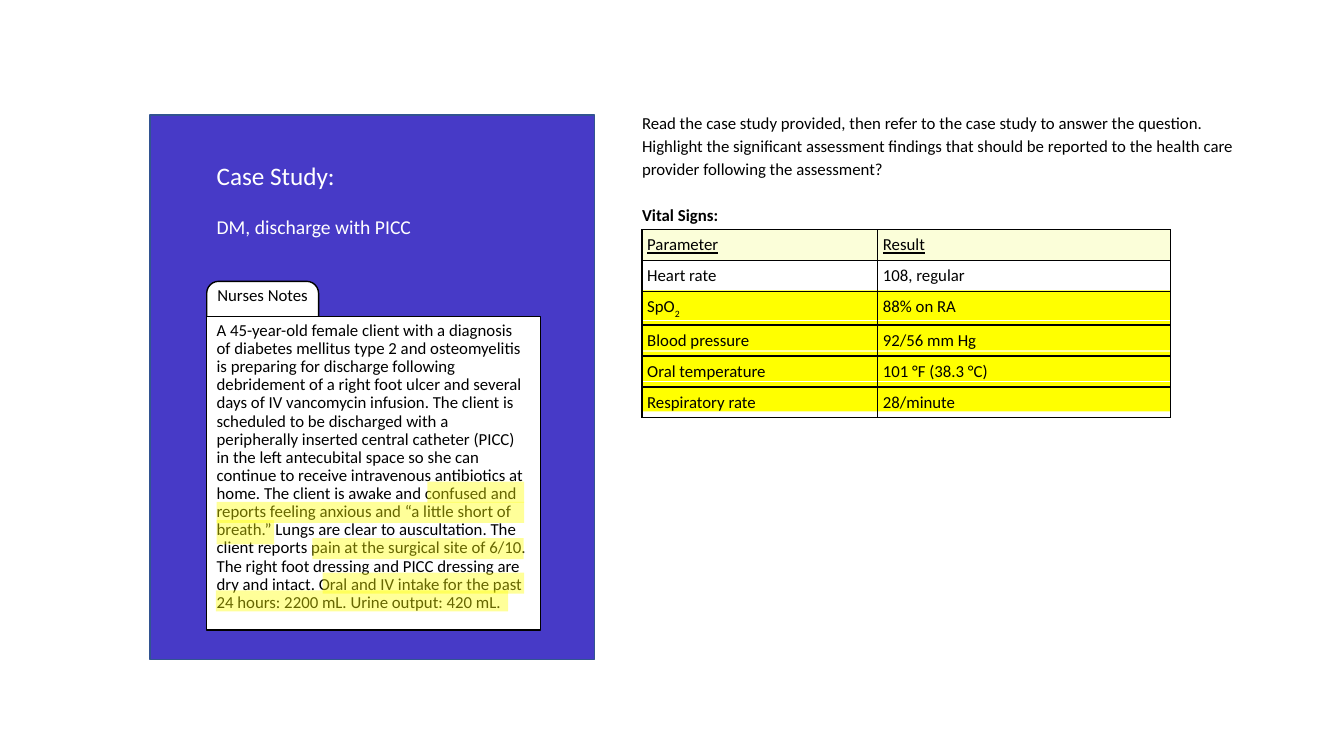
from pptx import Presentation
from pptx.dml.color import RGBColor
from pptx.enum.shapes import MSO_SHAPE
from pptx.enum.text import MSO_ANCHOR, PP_ALIGN
from pptx.oxml import parse_xml
from pptx.oxml.ns import nsdecls, qn
from pptx.util import Cm, Pt
from lxml.etree import SubElement

# Content
TITLE = "Case Study:"
SUBTITLE = "DM, discharge with PICC"
TAB = "Nurses Notes"
NOTES = (
    "A 45-year-old female client with a diagnosis of diabetes mellitus type 2 and "
    "osteomyelitis is preparing for discharge following debridement of a right foot "
    "ulcer and several days of IV vancomycin infusion. The client is scheduled to be "
    "discharged with a peripherally inserted central catheter (PICC) in the left "
    "antecubital space so she can continue to receive intravenous antibiotics at home. "
    "The client is awake and confused and reports feeling anxious and “a little short "
    "of breath.” Lungs are clear to auscultation. The client reports pain at the "
    "surgical site of 6/10. The right foot dressing and PICC dressing are dry and "
    "intact. Oral and IV intake for the past 24 hours: 2200 mL. Urine output: 420 mL."
)
QUESTION = [
    "Read the case study provided, then refer to the case study to answer the question.",
    "Highlight the significant assessment findings that should be reported to the "
    "health care provider following the assessment?",
]
TABLE_TITLE = "Vital Signs:"
VITALS = [
    ("Parameter", "Result"),
    ("Heart rate", "108, regular"),
    ("SpO2", "88% on RA"),
    ("Blood pressure", "92/56 mm Hg"),
    ("Oral temperature", "101 °F (38.3 °C)"),
    ("Respiratory rate", "28/minute"),
]
COLORS = {"panel": "473AC7", "panel_line": "325491", "white": "FFFFFF",
          "black": "000000", "yellow": "FFFF00", "header": "FBFED9"}
FONT = "Calibri"

# Layout in centimetres
LEFT = 5.21
TABLE_X, TABLE_Y = 16.18, 5.79
COLUMNS = (5.94, 7.37)
ROW_H = 0.78
BAR_Y, BAR_STEP, BAR_H, BAR_COUNT = 7.32, 0.77, 0.74, 4
MARKS = [  # left, top, width, height over the notes
    (10.77, 12.14, 2.44, 0.53),
    (5.46, 12.65, 7.75, 0.53),
    (5.46, 13.11, 1.45, 0.61),
    (7.87, 13.56, 5.33, 0.53),
    (8.13, 14.43, 5.08, 0.53),
    (5.44, 14.88, 7.37, 0.53),
]

prs = Presentation()
prs.slide_width, prs.slide_height = Cm(33.87), Cm(19.05)
s = prs.slides.add_slide(prs.slide_layouts[6])


def rgb(name):
    return RGBColor.from_string(COLORS[name])


def box(x, y, w, h, fill, line=None, kind=MSO_SHAPE.RECTANGLE, alpha=None):
    sp = s.shapes.add_shape(kind, Cm(x), Cm(y), Cm(w), Cm(h))
    sp.shadow.inherit = False
    sp.fill.solid()
    sp.fill.fore_color.rgb = rgb(fill)
    if line:
        sp.line.color.rgb = rgb(line)
        sp.line.width = Pt(1)
    else:
        sp.line.fill.background()
    if alpha:
        clr = sp.fill._xPr.find(qn("a:solidFill"))[0]
        SubElement(clr, qn("a:alpha")).set("val", str(alpha * 1000))
    return sp


def write(p, text, size=12, color="black", bold=None, underline=None,
          align=PP_ALIGN.LEFT, spacing=None, before=None, subscript=False):
    r = p.add_run()
    r.text = text
    r.font.name, r.font.size = FONT, Pt(size)
    r.font.bold, r.font.underline = bold, underline
    r.font.color.rgb = rgb(color)
    if subscript:
        r.font._element.set("baseline", "-25000")
    p.alignment = align
    if spacing:
        p.line_spacing = spacing
    if before:
        p.space_before = Pt(before)


def text_frame(x, y, w, h, margin_y=0.13):
    tf = s.shapes.add_textbox(Cm(x), Cm(y), Cm(w), Cm(h)).text_frame
    tf.word_wrap = True
    tf.margin_top = tf.margin_bottom = Cm(margin_y)
    return tf


def add_borders(cell):
    tc_pr = cell._tc.get_or_add_tcPr()
    for side in ("lnL", "lnR", "lnT", "lnB"):
        tc_pr.append(parse_xml(
            f'<a:{side} {nsdecls("a")} w="12700"><a:solidFill>'
            f'<a:srgbClr val="{COLORS["black"]}"/></a:solidFill></a:{side}>'))


# Case study panel with a note card
box(3.78, 2.9, 11.2, 13.72, "panel", "panel_line")
tab = box(LEFT, 7.09, 2.82, 1.8, "white", "black", MSO_SHAPE.ROUNDED_RECTANGLE)
tf = tab.text_frame
tf.word_wrap = False
tf.vertical_anchor = MSO_ANCHOR.TOP
tf.margin_left = tf.margin_right = tf.margin_top = tf.margin_bottom = 0
write(tf.paragraphs[0], TAB, align=PP_ALIGN.CENTER)
box(LEFT, 7.98, 8.41, 7.9, "white", "black")

# Yellow bars behind the abnormal vital signs
for i in range(BAR_COUNT):
    box(TABLE_X, BAR_Y + i * BAR_STEP, sum(COLUMNS), BAR_H, "yellow")

# Panel texts
for text, y, h, size, color in [(NOTES, 7.98, 7.95, 12, "black"),
                                (TITLE, 3.99, 0.97, 18, "white"),
                                (SUBTITLE, 5.36, 1.7, 14, "white")]:
    tf = text_frame(LEFT, y, 8.36, h)
    write(tf.paragraphs[0], text, size=size, color=color, spacing=0.9)

# Question and table title
tf = text_frame(15.93, 2.67, 16.94, 3.12, margin_y=0.1)
write(tf.paragraphs[0], QUESTION[0], spacing=1.14)
write(tf.add_paragraph(), QUESTION[1], spacing=1.14)
write(tf.add_paragraph(), TABLE_TITLE, bold=True, spacing=1.14, before=16.5)

# Vital signs table
table = s.shapes.add_table(len(VITALS), len(COLUMNS), Cm(TABLE_X), Cm(TABLE_Y),
                           Cm(sum(COLUMNS)), Cm(ROW_H * len(VITALS))).table
table.first_row = table.horz_banding = False
for column, width in zip(table.columns, COLUMNS):
    column.width = Cm(width)
for i, values in enumerate(VITALS):
    table.rows[i].height = Cm(0.84 if values[0] == "SpO2" else ROW_H)
    for j, value in enumerate(values):
        cell = table.cell(i, j)
        cell.margin_left = cell.margin_right = Cm(0.13)
        cell.margin_top = cell.margin_bottom = Cm(0.13)
        add_borders(cell)
        if i == 0:
            cell.fill.solid()
            cell.fill.fore_color.rgb = rgb("header")
        else:
            cell.fill.background()
        p = cell.text_frame.paragraphs[0]
        if value == "SpO2":
            write(p, "SpO")
            write(p, "2", subscript=True)
        else:
            write(p, value, underline=True if i == 0 else None)

# Highlighter marks over the notes
for mark in MARKS:
    box(*mark, "yellow", alpha=40)

prs.save("out.pptx")
